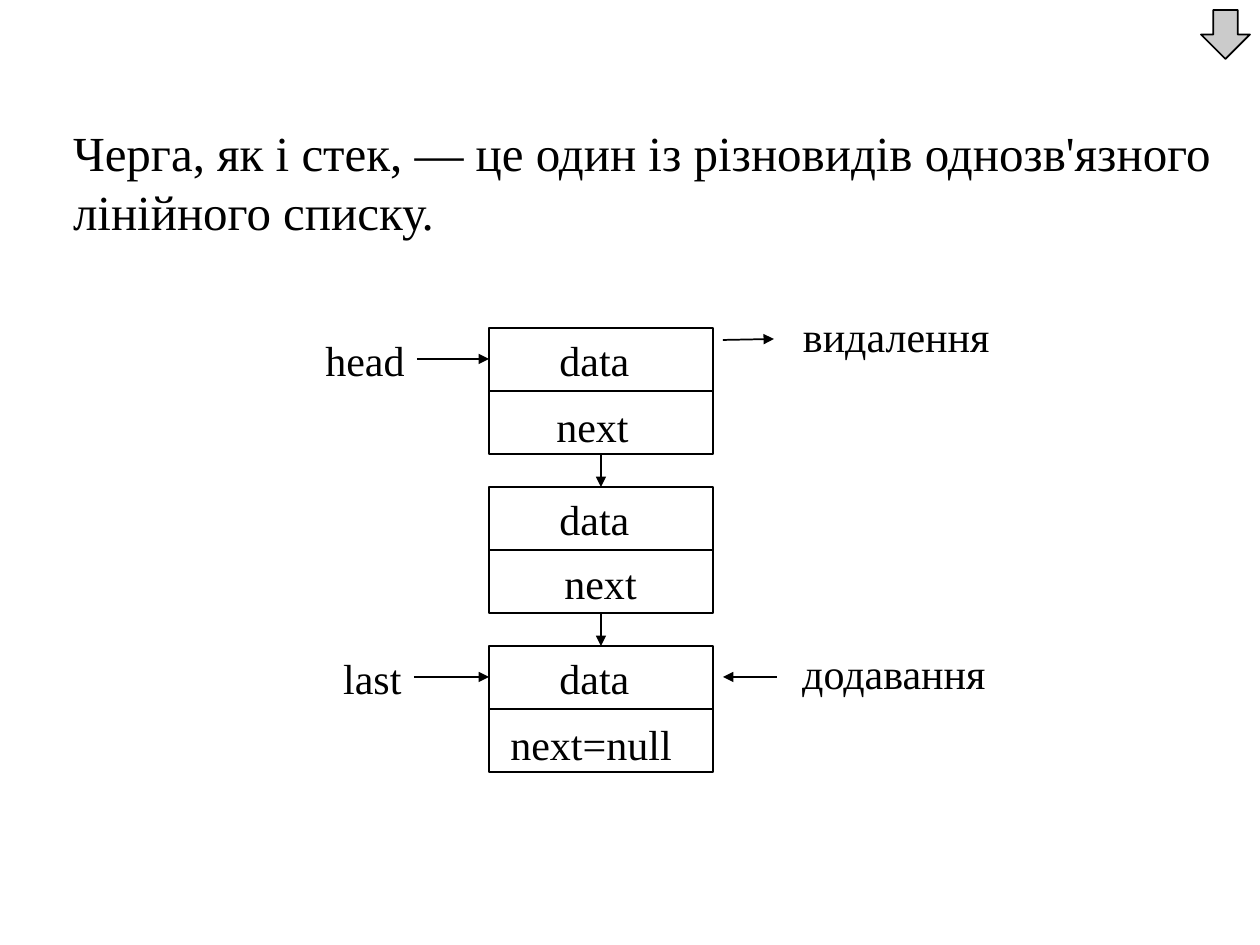
"""Builds a slide that shows a queue as a singly linked list."""
import pptx
import pptx.dml.color
import pptx.enum.shapes
import pptx.enum.text
import pptx.oxml
import pptx.oxml.ns
import pptx.util
from lxml import etree

BLACK = pptx.dml.color.RGBColor(0x00, 0x00, 0x00)
GREY = pptx.dml.color.RGBColor(0xCB, 0xCB, 0xCB)
FONT = "Times New Roman"
SHAPE = pptx.enum.shapes.MSO_SHAPE
ALIGN = pptx.enum.text.PP_ALIGN
LEFT, TOP, STEP = 489, 328, 159
WIDE, HIGH = 224, 63


def px(n):
    return pptx.util.Emu(round(n * 914400 / 126))


def tag(parent, name, **attrs):
    return etree.SubElement(parent, pptx.oxml.ns.qn(name), attrs)


def write(frame, text, size=24, align=ALIGN.LEFT, wrap=False):
    frame.word_wrap = wrap
    frame.auto_size = pptx.enum.text.MSO_AUTO_SIZE.NONE
    para = frame.paragraphs[0]
    para.alignment = align
    run = para.add_run()
    run.text = text
    run.font.size = pptx.util.Pt(size)
    run.font.name = FONT
    run.font.color.rgb = BLACK
    return para


def label(slide, text, x, y, w, **form):
    box = slide.shapes.add_textbox(px(x), px(y), px(w), px(HIGH))
    write(box.text_frame, text, **form)


def block(slide, kind, x, y, w, h, fill=None):
    shape = slide.shapes.add_shape(kind, px(x), px(y), px(w), px(h))
    shape.shadow.inherit = False
    if fill is None:
        shape.fill.background()
    else:
        shape.fill.solid()
        shape.fill.fore_color.rgb = fill
    shape.line.color.rgb = BLACK
    shape.line.width = pptx.util.Pt(1)


def arrow(slide, x1, y1, x2, y2):
    line = slide.shapes.add_connector(
        pptx.enum.shapes.MSO_CONNECTOR.STRAIGHT, px(x1), px(y1), px(x2), px(y2))
    line.line.color.rgb = BLACK
    line.line.width = pptx.util.Pt(1)
    tag(line.line._get_or_add_ln(), "a:tailEnd", type="triangle")
    tag(line._element.spPr, "a:effectLst")


def node(slide, row, link, x, w, drop):
    y = TOP + row * STEP
    for top in (y, y + HIGH):
        block(slide, SHAPE.RECTANGLE, LEFT, top, WIDE, HIGH)
    label(slide, "data", LEFT + 58, y, 96)
    label(slide, link, x, y + HIGH + drop, w)


def body(slide, text):
    slide.shapes.title._element.getparent().remove(slide.shapes.title._element)
    box = slide.placeholders[1]
    box.left, box.top, box.width, box.height = px(0), px(116), px(1239), px(159)
    frame = box.text_frame
    frame.margin_left = frame.margin_right = px(25)
    para = write(frame, text, size=28, wrap=True)
    para.space_before = pptx.util.Pt(5.6)
    props = para._p.get_or_add_pPr()
    props.set("marL", str(px(48)))
    props.set("indent", "0")
    tag(props, "a:buNone")


def main():
    deck = pptx.Presentation()
    deck.slide_width, deck.slide_height = px(1260), px(945)
    slide = deck.slides.add_slide(deck.slide_layouts[1])
    body(slide, "Черга, як і стек, — це один із різновидів "
                "однозв'язного лінійного списку.")
    block(slide, SHAPE.DOWN_ARROW, 1201, 10, 49, 49, fill=GREY)

    links = [("next", 544, 98, 3), ("next", 552, 98, 1), ("next=null", 498, 188, 3)]
    for row, link in enumerate(links):
        node(slide, row, *link)
    for row in (1, 2):
        y = TOP + row * STEP
        arrow(slide, 601, y - STEP + 2 * HIGH, 601, y)

    last = TOP + 2 * STEP
    for text, x, y, w in [("head", 312, TOP, 105), ("last", 330, last, 84),
                          ("видалення", 788, 304, 214),
                          ("додавання", 788, 641, 210)]:
        label(slide, text, x, y, w, align=ALIGN.RIGHT)
    arrow(slide, 417, TOP + 31, LEFT, TOP + 31)
    arrow(slide, 414, last + 31, LEFT, last + 31)
    arrow(slide, 723, 340, 774, 339)
    arrow(slide, 777, 677, 723, 677)
    deck.save("out.pptx")


if __name__ == "__main__":
    main()
